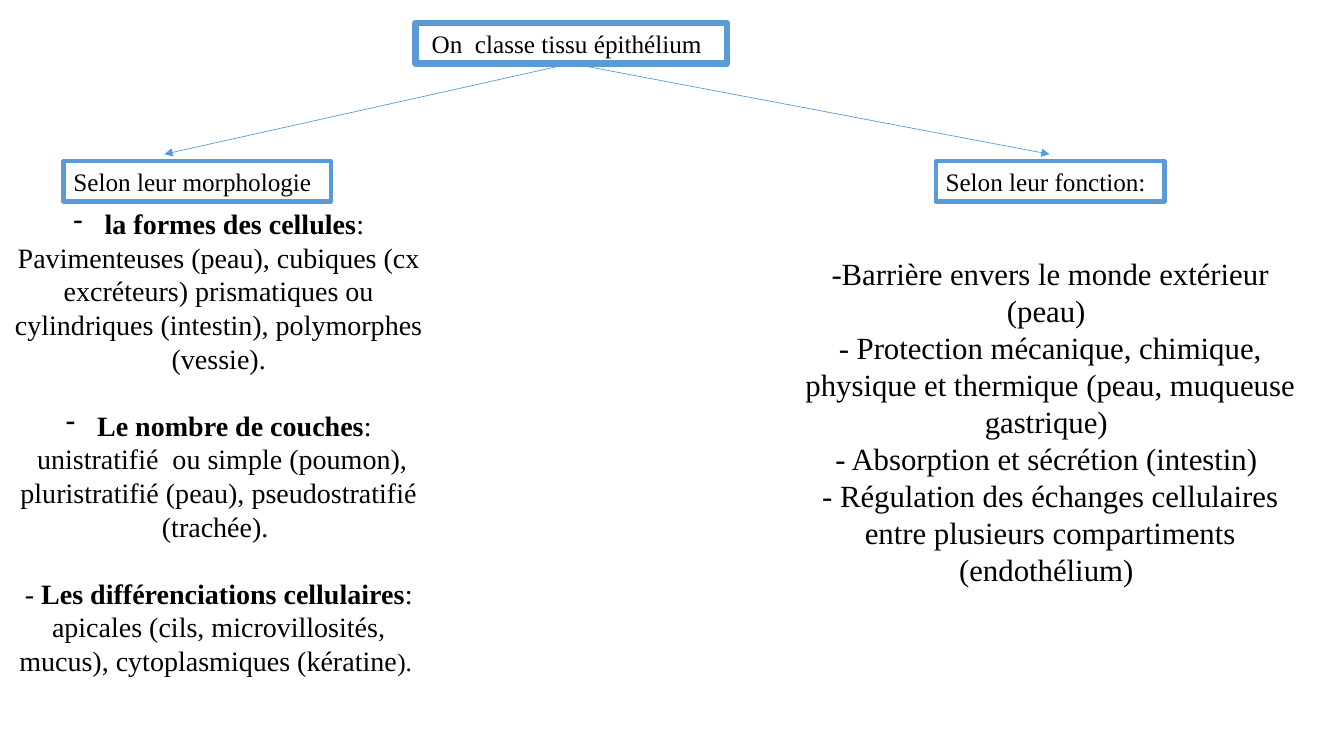
from lxml.etree import SubElement
from pptx import Presentation
from pptx.dml.color import RGBColor
from pptx.enum.shapes import MSO_CONNECTOR, MSO_SHAPE
from pptx.enum.text import MSO_ANCHOR, PP_ALIGN
from pptx.oxml.ns import qn
from pptx.util import Inches, Pt

BLUE, BLACK, WHITE = "5B9BD5", "000000", "FFFFFF"
FONT = "Times New Roman"
BOTTOM = 2

MORPHOLOGY = [
    ("-", 0, [("la formes des cellules", True), (":", False)]),
    (None, 0, [("Pavimenteuses (peau), cubiques (cx excréteurs) prismatiques ou "
                "cylindriques (intestin), polymorphes (vessie).", False)]),
    ("-", 24, [("Le nombre de couches", True), (":", False)]),
    (None, 0, [(" unistratifié  ou simple (poumon), pluristratifié (peau), "
                "pseudostratifié (trachée). ", False)]),
    (None, 24, [("- ", False), ("Les différenciations cellulaires", True),
                (": apicales (cils, microvillosités, mucus), cytoplasmiques (kératine", False),
                ("). ", False, 18)]),
]
FUNCTIONS = [(None, 0, [(text, False)]) for text in (
    "-Barrière envers le monde extérieur (peau) ",
    "- Protection mécanique, chimique, physique et thermique (peau, muqueuse gastrique) ",
    "- Absorption et sécrétion (intestin) ",
    "- Régulation des échanges cellulaires entre plusieurs compartiments (endothélium) ",
)]


def color(value):
    return RGBColor.from_string(value)


def apply(target, values):
    for name, value in values.items():
        setattr(target, name, value)


def add_span(para, text, size, bold=False):
    span = para.add_run()
    span.text = text
    apply(span.font, {"name": FONT, "size": Pt(size), "bold": bold})
    span.font.color.rgb = color(BLACK)


def add_bullet(para, mark):
    properties = para._p.get_or_add_pPr()
    properties.set("marL", str(Inches(0.31)))
    properties.set("indent", str(-Inches(0.31)))
    SubElement(properties, qn("a:buFontTx"))
    SubElement(properties, qn("a:buChar")).set("char", mark)


def add_node(page, text, left, top, width, line_width, wrap=False):
    box = page.shapes.add_shape(
        MSO_SHAPE.RECTANGLE, Inches(left), Inches(top), Inches(width), Inches(0.4))
    box.shadow.inherit = False
    box.fill.solid()
    box.fill.fore_color.rgb = color(WHITE)
    box.line.color.rgb = color(BLUE)
    box.line.width = Pt(line_width)
    apply(box.text_frame, {"word_wrap": wrap, "vertical_anchor": MSO_ANCHOR.TOP})
    para = box.text_frame.paragraphs[0]
    para.alignment = PP_ALIGN.LEFT
    add_span(para, text, 18)
    return box


def add_details(page, paragraphs, left, top, width, height, size):
    box = page.shapes.add_textbox(Inches(left), Inches(top), Inches(width), Inches(height))
    frame = box.text_frame
    frame.word_wrap = True
    for index, (mark, gap, spans) in enumerate(paragraphs):
        para = frame.add_paragraph() if index else frame.paragraphs[0]
        apply(para, {"alignment": PP_ALIGN.CENTER, "space_before": Pt(gap)})
        if mark:
            add_bullet(para, mark)
        for text, bold, *own_size in spans:
            add_span(para, text, own_size[0] if own_size else size, bold)


def add_arrow(page, source, left, top):
    arrow = page.shapes.add_connector(
        MSO_CONNECTOR.STRAIGHT, Inches(5.66), Inches(0.63), Inches(left), Inches(top))
    arrow.begin_connect(source, BOTTOM)
    arrow.line.color.rgb = color(BLUE)
    arrow.line.width = Pt(0.5)
    SubElement(arrow.line._get_or_add_ln(), qn("a:tailEnd")).set("type", "triangle")
    SubElement(arrow._element.spPr, qn("a:effectLst"))


def main():
    deck = Presentation()
    apply(deck, {"slide_width": Inches(13.33), "slide_height": Inches(7.5)})
    page = deck.slides.add_slide(deck.slide_layouts[6])
    root = add_node(page, " On  classe tissu épithélium", 4.12, 0.23, 3.09, 4.5, wrap=True)
    add_node(page, "Selon leur morphologie", 0.63, 1.6, 2.65, 3)
    add_node(page, "Selon leur fonction:", 9.28, 1.6, 2.27, 3)
    add_details(page, MORPHOLOGY, 0, 2, 4.34, 4.81, 20)
    add_details(page, FUNCTIONS, 7.81, 2.48, 5.21, 3.43, 22)
    for left in (1.63, 10.41):
        add_arrow(page, root, left, 1.53)
    deck.save("out.pptx")


if __name__ == "__main__":
    main()
